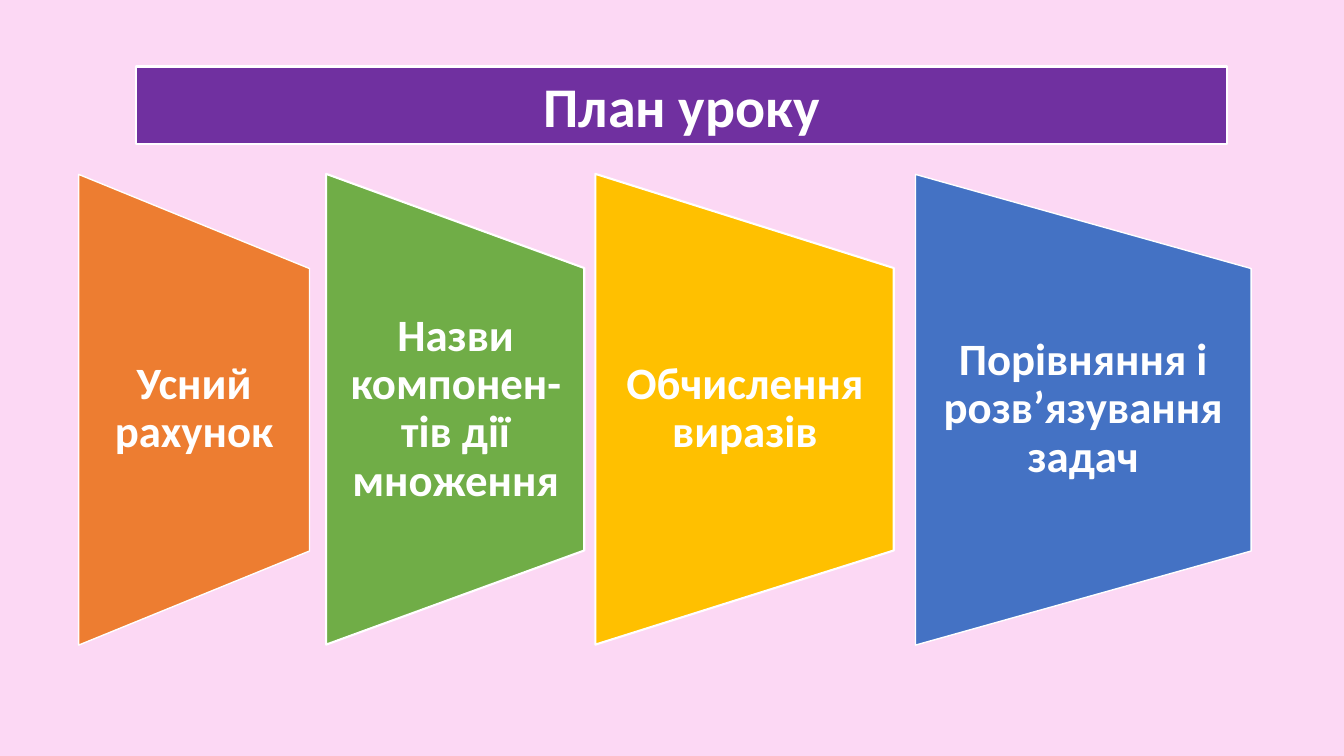
from pptx import Presentation
from pptx.dml.color import RGBColor
from pptx.enum.shapes import MSO_SHAPE
from pptx.enum.text import MSO_ANCHOR, PP_ALIGN
from pptx.util import Emu, Pt

SCALE = 9144
WIDTH, HEIGHT = 1333, 750
WHITE = "FFFFFF"
STEPS = [
    ("Усний рахунок", 78, 229, "ED7D31", 1),
    ("Назви компонен-тів дії множення", 324, 256, "70AD47", 1.5),
    ("Обчислення виразів", 591, 296, "FFC000", 1.5),
    ("Порівняння і розв’язування задач", 908, 333, "4472C4", 1),
]


def px(size):
    return Emu(size * SCALE)


def color(code):
    return RGBColor.from_string(code)


class Deck:
    """Draws styled elements on the current slide."""

    def __init__(self, back):
        self.show = Presentation()
        self.show.slide_width, self.show.slide_height = px(WIDTH), px(HEIGHT)
        self.slide = self.show.slides.add_slide(self.show.slide_layouts[6])
        fill = self.slide.background.fill
        fill.solid()
        fill.fore_color.rgb = color(back)

    def shape(self, kind, x, y, w, h, fill, line):
        item = self.slide.shapes.add_shape(kind, px(x), px(y), px(w), px(h))
        item.shadow.inherit = False
        item.fill.solid()
        item.fill.fore_color.rgb = color(fill)
        item.line.color.rgb = color(WHITE)
        item.line.width = Pt(line)
        return item

    def label(self, frame, text, size):
        frame.word_wrap = True
        para = frame.paragraphs[0]
        para.text = text
        para.alignment = PP_ALIGN.CENTER
        font = para.font
        font.name, font.size, font.bold = "Calibri", Pt(size), True
        font.color.rgb = color(WHITE)
        return para

    def title(self, text, x, y, w, h, fill):
        bar = self.shape(MSO_SHAPE.RECTANGLE, x, y, w, h, fill, 1.5)
        bar.text_frame.vertical_anchor = MSO_ANCHOR.TOP
        self.label(bar.text_frame, text, 40)

    def step(self, text, x, w, fill, line, mid=406, tall=467, high=280):
        block = self.shape(MSO_SHAPE.FLOWCHART_MANUAL_OPERATION,
                           x + (w - tall) // 2, mid - w // 2, tall, w, fill, line)
        block.rotation = 270
        box = self.slide.shapes.add_textbox(px(x), px(mid - high // 2), px(w), px(high))
        frame = box.text_frame
        frame.vertical_anchor = MSO_ANCHOR.MIDDLE
        frame.margin_left = frame.margin_right = px(22)
        frame.margin_top = frame.margin_bottom = 0
        para = self.label(frame, text, 32)
        para.line_spacing = 0.9
        para.space_after = Pt(11)


def main():
    deck = Deck("FCD8F4")
    deck.title("План уроку", 135, 66, 1082, 77, "7030A0")
    for step in STEPS:
        deck.step(*step)
    deck.show.save("out.pptx")


if __name__ == "__main__":
    main()
